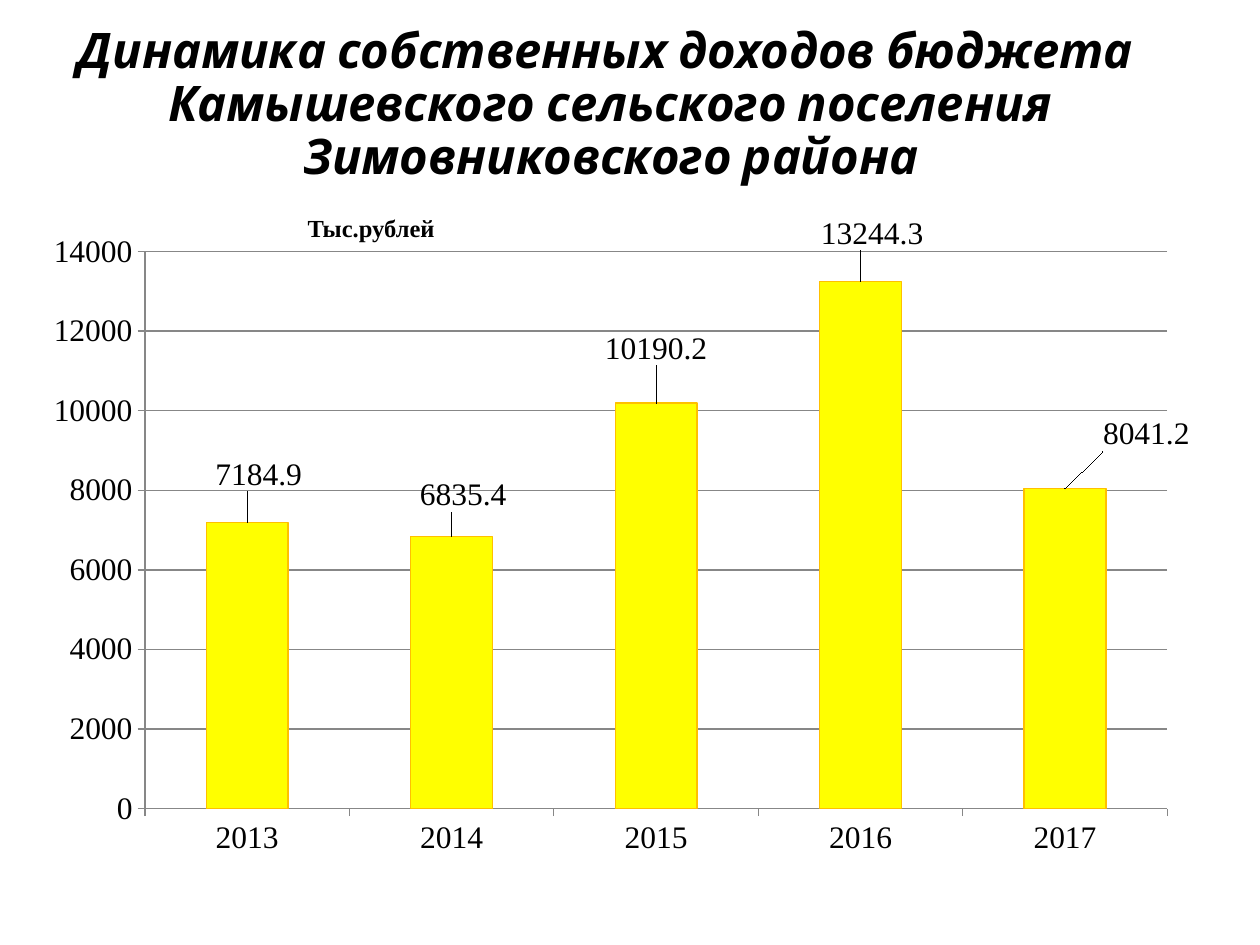
from lxml.etree import SubElement
from pptx import Presentation
from pptx.chart.data import CategoryChartData
from pptx.dml.color import RGBColor
from pptx.enum.chart import XL_CHART_TYPE as ChartType, XL_LABEL_POSITION as LabelPos, XL_TICK_MARK as Tick
from pptx.enum.text import MSO_ANCHOR as Anchor, MSO_AUTO_SIZE as AutoSize, PP_ALIGN as Align
from pptx.oxml.ns import qn
from pptx.util import Cm, Pt

SERIF = "Times New Roman"
INCOME = {"2013": 7184.9, "2014": 6835.4, "2015": 10190.2, "2016": 13244.3, "2017": 8041.2}
# Label shifts from the bar end, as fractions of the chart size
LABEL_SHIFTS = [(0.01, -0.04), (0.01, -0.03), (0, -0.05), (0.01, -0.04), (0.07, -0.05)]


def rgb(code):
    return RGBColor.from_string(code)


def style_font(font, name, size, bold=None, italic=None):
    font.name, font.size, font.bold, font.italic = name, Pt(size), bold, italic
    font.color.rgb = rgb("000000")


def add_layout(parent, index, **values):
    """Insert a manual chart layout as the given child of parent."""
    layout = parent.find(qn("c:layout"))
    if layout is not None:
        parent.remove(layout)
    layout = SubElement(parent, qn("c:layout"))
    parent.insert(index, layout)
    manual = SubElement(layout, qn("c:manualLayout"))
    for tag, value in values.items():
        SubElement(manual, qn(f"c:{tag}")).set("val", str(value))


def place_title(slide, left, top, width, height):
    title = slide.shapes.title
    title.left, title.top, title.width, title.height = left, top, width, height
    tf = title.text_frame
    tf.text = "Динамика собственных доходов бюджета \vКамышевского сельского поселения Зимовниковского района"
    tf.word_wrap, tf.auto_size, tf.vertical_anchor = True, AutoSize.NONE, Anchor.MIDDLE
    p = tf.paragraphs[0]
    p.alignment, p.line_spacing = Align.CENTER, 0.9
    for r in p.runs:
        style_font(r.font, "Karla", 28, True, True)


def style_axis(axis):
    axis.major_tick_mark, axis.minor_tick_mark = Tick.OUTSIDE, Tick.NONE
    axis.format.line.color.rgb = rgb("878787")


def add_income_chart(slide, left, top, width, height):
    data = CategoryChartData(number_format="General")
    data.categories = list(INCOME)
    data.add_series("Series 1", list(INCOME.values()))
    chart = slide.shapes.add_chart(ChartType.COLUMN_CLUSTERED, left, top, width, height, data).chart
    chart.has_legend = chart.has_title = False
    style_font(chart.font, SERIF, 18)

    style_axis(chart.category_axis)
    axis = chart.value_axis
    style_axis(axis)
    axis.minimum_scale, axis.maximum_scale, axis.major_unit = 0, 14000, 2000
    axis.major_gridlines.format.line.color.rgb = rgb("878787")

    plot = chart.plots[0]
    plot.gap_width, plot.vary_by_categories = 150, False
    series = plot.series[0]
    series.format.fill.solid()
    series.format.fill.fore_color.rgb = rgb("FFFF00")
    series.format.line.color.rgb = rgb("FFC000")
    series.format.line.width = Pt(0.75)
    labels = series.data_labels
    labels.show_value, labels.position = True, LabelPos.OUTSIDE_END
    for i, (x, y) in enumerate(LABEL_SHIFTS):
        series.points[i].data_label.position = LabelPos.OUTSIDE_END
        add_layout(labels._element.findall(qn("c:dLbl"))[i], 1, x=x, y=y)

    plot_area = chart._chartSpace.find(".//" + qn("c:plotArea"))
    add_layout(plot_area, 0, layoutTarget="inner", xMode="edge", yMode="edge",
               x=0.1, y=0.05, w=0.88, h=0.86)


def add_unit_label(slide, left, top, width, height):
    tf = slide.shapes.add_textbox(left, top, width, height).text_frame
    tf.word_wrap, tf.auto_size = True, AutoSize.SHAPE_TO_FIT_TEXT
    tf.text = "Тыс.рублей"
    style_font(tf.paragraphs[0].runs[0].font, SERIF, 14, True)


def main():
    prs = Presentation()
    prs.slide_width, prs.slide_height = Cm(25.4), Cm(19.05)
    slide = prs.slides.add_slide(prs.slide_layouts[0])
    subtitle = slide.placeholders[1]._element
    subtitle.getparent().remove(subtitle)
    place_title(slide, Cm(1), Cm(0.4), Cm(22.63), Cm(3.45))
    add_income_chart(slide, Cm(0.58), Cm(4.37), Cm(23.42), Cm(13.11))
    add_unit_label(slide, Cm(5.95), Cm(4.17), Cm(3.58), Cm(0.86))
    prs.save("out.pptx")


if __name__ == "__main__":
    main()
